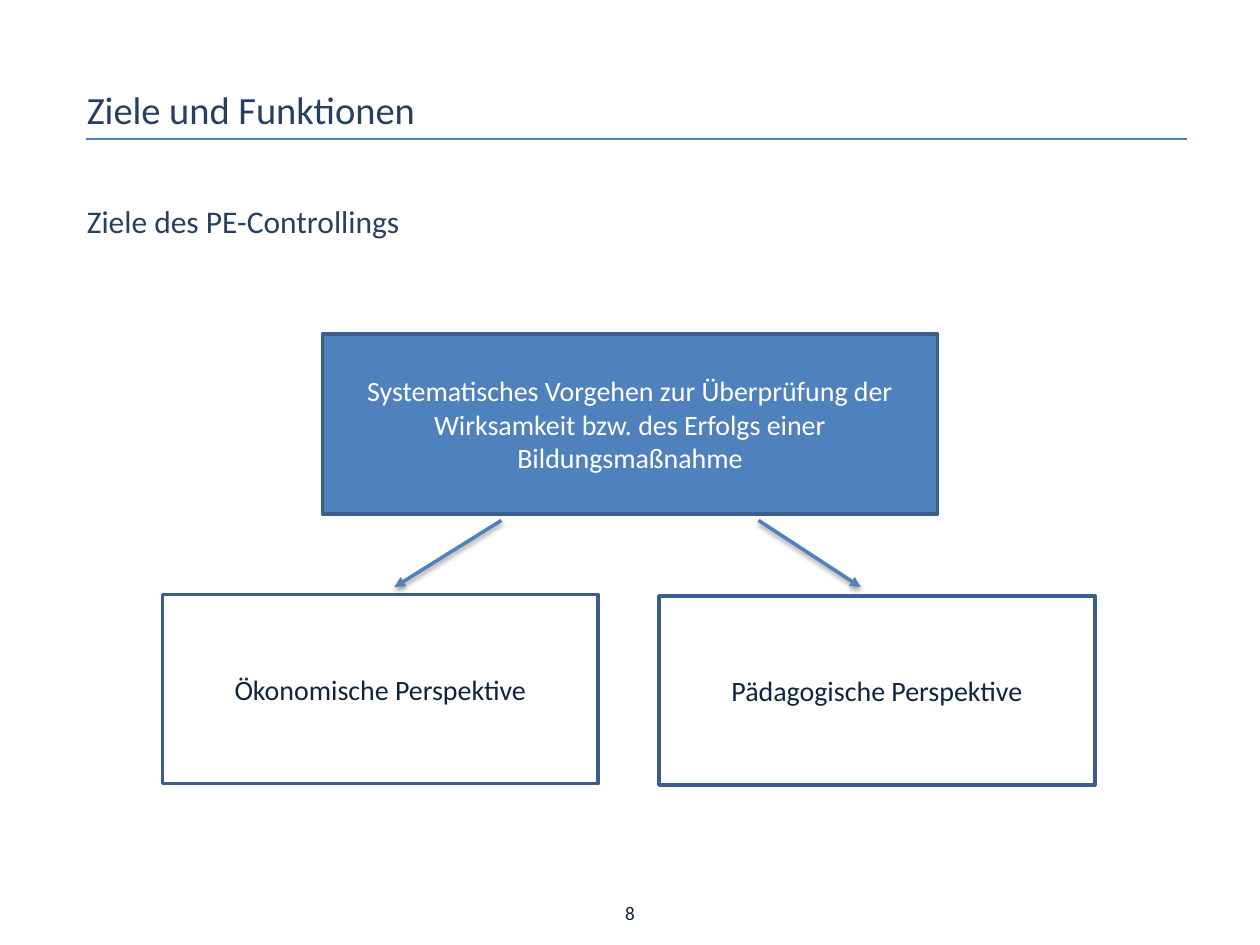
"""Build the slide on the goals of personnel development controlling."""
from lxml.etree import SubElement
from pptx import Presentation
from pptx.dml.color import RGBColor
from pptx.enum.shapes import MSO_CONNECTOR, MSO_SHAPE
from pptx.enum.text import MSO_ANCHOR, PP_ALIGN
from pptx.oxml.ns import qn
from pptx.util import Pt

FONT = "Calibri"
BLUE = RGBColor(0x4F, 0x81, 0xBD)
BORDER = RGBColor(0x3A, 0x5F, 0x8C)
HEADING = RGBColor(0x25, 0x40, 0x61)
NAVY = RGBColor(0x0F, 0x24, 0x3E)
NUMBER = RGBColor(0x10, 0x25, 0x3F)
WHITE = RGBColor(0xFF, 0xFF, 0xFF)


def set_text(shape, text, size, color, align):
    text_frame = shape.text_frame
    text_frame.word_wrap = True
    text_frame.text = text
    paragraph = text_frame.paragraphs[0]
    paragraph.alignment = align
    font = paragraph.runs[0].font
    font.name, font.size = FONT, Pt(size)
    font.color.rgb = color


def add_text(slide, bounds, text, size, color, align=PP_ALIGN.LEFT):
    shape = slide.shapes.add_textbox(*map(Pt, bounds))
    set_text(shape, text, size, color, align)


def add_box(slide, bounds, text, color, fill=None):
    shape = slide.shapes.add_shape(MSO_SHAPE.RECTANGLE, *map(Pt, bounds))
    shape.shadow.inherit = False
    if fill is None:
        shape.fill.background()
    else:
        shape.fill.solid()
        shape.fill.fore_color.rgb = fill
    shape.line.color.rgb = BORDER
    shape.line.width = Pt(2)
    shape.text_frame.vertical_anchor = MSO_ANCHOR.MIDDLE
    set_text(shape, text, 16, color, PP_ALIGN.CENTER)


def add_line(slide, points, width):
    """Add a straight line and return it with its empty effect list."""
    line = slide.shapes.add_connector(MSO_CONNECTOR.STRAIGHT, *map(Pt, points))
    line.line.color.rgb = BLUE
    line.line.width = Pt(width)
    effects = SubElement(line._element.spPr, qn("a:effectLst"))
    return line, effects


def add_arrow(slide, points):
    arrow, effects = add_line(slide, points, 2)
    SubElement(arrow.line._get_or_add_ln(), qn("a:tailEnd"), type="triangle")
    shadow = SubElement(effects, qn("a:outerShdw"), blurRad=str(Pt(3.1)),
                        dist=str(Pt(1.6)), dir="5400000", rotWithShape="0")
    black = SubElement(shadow, qn("a:srgbClr"), val="000000")
    SubElement(black, qn("a:alpha"), val="38000")


def main():
    presentation = Presentation()
    presentation.slide_width, presentation.slide_height = Pt(720), Pt(540)
    slide = presentation.slides.add_slide(presentation.slide_layouts[6])

    add_line(slide, (49, 79.2, 678.2, 79.2), 1.25)
    add_text(slide, (340, 511.2, 40, 21), "8", 11, NUMBER, PP_ALIGN.CENTER)
    add_text(slide, (42.5, 45.4, 538.6, 33.8), "Ziele und Funktionen", 22, HEADING)
    add_text(slide, (42.5, 111.6, 663, 116.6), "Ziele des PE-Controllings", 18, HEADING)

    add_box(slide, (184.3, 190.8, 351.4, 103),
            "Systematisches Vorgehen zur Überprüfung der Wirksamkeit "
            "bzw. des Erfolgs einer Bildungsmaßnahme", WHITE, BLUE)
    perspectives = (
        ("Ökonomische Perspektive", 92.8, 339.8, 286.5, 225.4),
        ("Pädagogische Perspektive", 376.6, 340.6, 433.5, 491.8),
    )
    for text, left, top, arrow_start, arrow_end in perspectives:
        add_box(slide, (left, top, 249.1, 108), text, NAVY)
        add_arrow(slide, (arrow_start, 297.4, arrow_end, 335.5))

    presentation.save("out.pptx")


if __name__ == "__main__":
    main()
